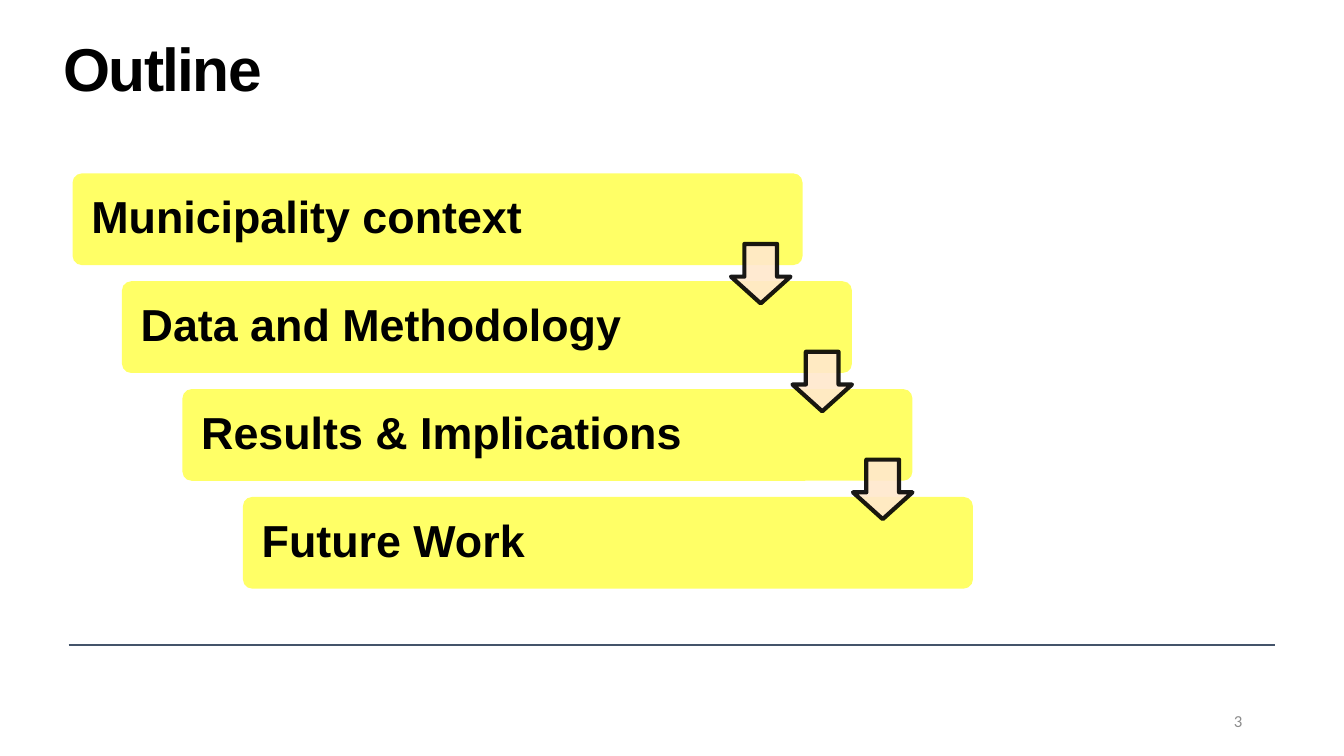
import lxml.etree
import pptx
import pptx.dml.color
import pptx.enum.shapes
import pptx.enum.text
import pptx.oxml.ns
import pptx.util

EMU_PER_PX = 9144  # 100 px to the inch
SHAPES = pptx.enum.shapes.MSO_SHAPE
ALIGN = pptx.enum.text.PP_ALIGN
ANCHOR = pptx.enum.text.MSO_ANCHOR


def px(length):
    return pptx.util.Emu(length * EMU_PER_PX)


def color(hex_string):
    return pptx.dml.color.RGBColor.from_string(hex_string)


def set_opacity(shape, percent):
    """Make both the fill and the outline of a shape translucent."""
    for element in shape._element.spPr.iter(pptx.oxml.ns.qn("a:srgbClr")):
        alpha = lxml.etree.SubElement(element, pptx.oxml.ns.qn("a:alpha"))
        alpha.set("val", str(percent * 1000))


class OutlineSlide:
    BLACK = "000000"
    BAR_FILL = "FFFF66"
    ARROW_FILL = "FFE8CC"
    RULE = "44546A"
    PAGE_NUMBER = "8C8C8C"

    def __init__(self, slide):
        self.slide = slide

    def set_text(self, frame, text, size, font="Arial", hex_color=BLACK, bold=True,
                 align=ALIGN.LEFT, anchor=ANCHOR.MIDDLE, spacing=1.0, margins=(10, 5)):
        """Fill a text frame; margins are (left and right, top and bottom) in px."""
        frame.word_wrap = True
        frame.vertical_anchor = anchor
        frame.margin_left = frame.margin_right = px(margins[0])
        frame.margin_top = frame.margin_bottom = px(margins[1])
        paragraph = frame.paragraphs[0]
        paragraph.text = text
        paragraph.alignment = align
        paragraph.line_spacing = spacing
        paragraph.font.name = font
        paragraph.font.size = pptx.util.Pt(size)
        paragraph.font.bold = bold
        paragraph.font.color.rgb = color(hex_color)
        return paragraph

    def text_box(self, left, top, width, height, text, size, **style):
        box = self.slide.shapes.add_textbox(px(left), px(top), px(width), px(height))
        return self.set_text(box.text_frame, text, size, **style)

    def title(self, text):
        paragraph = self.text_box(63, 42, 1179, 131, text, 43.2, anchor=ANCHOR.TOP,
                                  spacing=0.85, margins=(0, 0))
        paragraph.runs[0]._r.get_or_add_rPr().set("spc", "-120")

    def page_number(self, text):
        self.text_box(942, 695, 300, 40, text, 12, font="Calibri", bold=False,
                      hex_color=self.PAGE_NUMBER, align=ALIGN.RIGHT)

    def rule(self, left, right, y):
        line = self.slide.shapes.add_connector(
            pptx.enum.shapes.MSO_CONNECTOR.STRAIGHT, px(left), px(y), px(right), px(y))
        line.line.color.rgb = color(self.RULE)
        line.line.width = pptx.util.Pt(1)
        lxml.etree.SubElement(line._element.spPr, pptx.oxml.ns.qn("a:effectLst"))

    def preset(self, kind, left, top, width, height, fill, adjustments):
        shape = self.slide.shapes.add_shape(kind, px(left), px(top), px(width), px(height))
        shape.shadow.inherit = False
        shape.fill.solid()
        shape.fill.fore_color.rgb = color(fill)
        for index, value in enumerate(adjustments):
            shape.adjustments[index] = value
        return shape

    def bar(self, left, top, text):
        shape = self.preset(SHAPES.ROUNDED_RECTANGLE, left, top, 724, 91,
                            self.BAR_FILL, [0.1])
        shape.line.fill.background()
        self.set_text(shape.text_frame, text, 32, spacing=0.9, margins=(16, 16))

    def arrow(self, left, top):
        shape = self.preset(SHAPES.DOWN_ARROW, left, top, 59, 59,
                            self.ARROW_FILL, [0.55, 0.45])
        shape.line.color.rgb = color(self.BLACK)
        shape.line.width = pptx.util.Pt(3)
        set_opacity(shape, 90)


def main():
    presentation = pptx.Presentation()
    presentation.slide_width = px(1333)
    presentation.slide_height = px(750)
    slide = presentation.slides.add_slide(presentation.slide_layouts[6])
    outline = OutlineSlide(slide)

    outline.rule(68, 1265, 640)
    outline.page_number("3")
    outline.title("Outline")

    topics = ["Municipality context", "Data and Methodology",
              "Results & Implications", "Future Work"]
    bar_lefts = [72, 121, 181, 241]
    first_top, step = 172, 107
    for index, (left, topic) in enumerate(zip(bar_lefts, topics)):
        outline.bar(left, first_top + index * step, topic)
    for index, left in enumerate([725, 786, 846]):
        outline.arrow(left, first_top + 70 + index * step)

    presentation.save("out.pptx")


if __name__ == "__main__":
    main()
